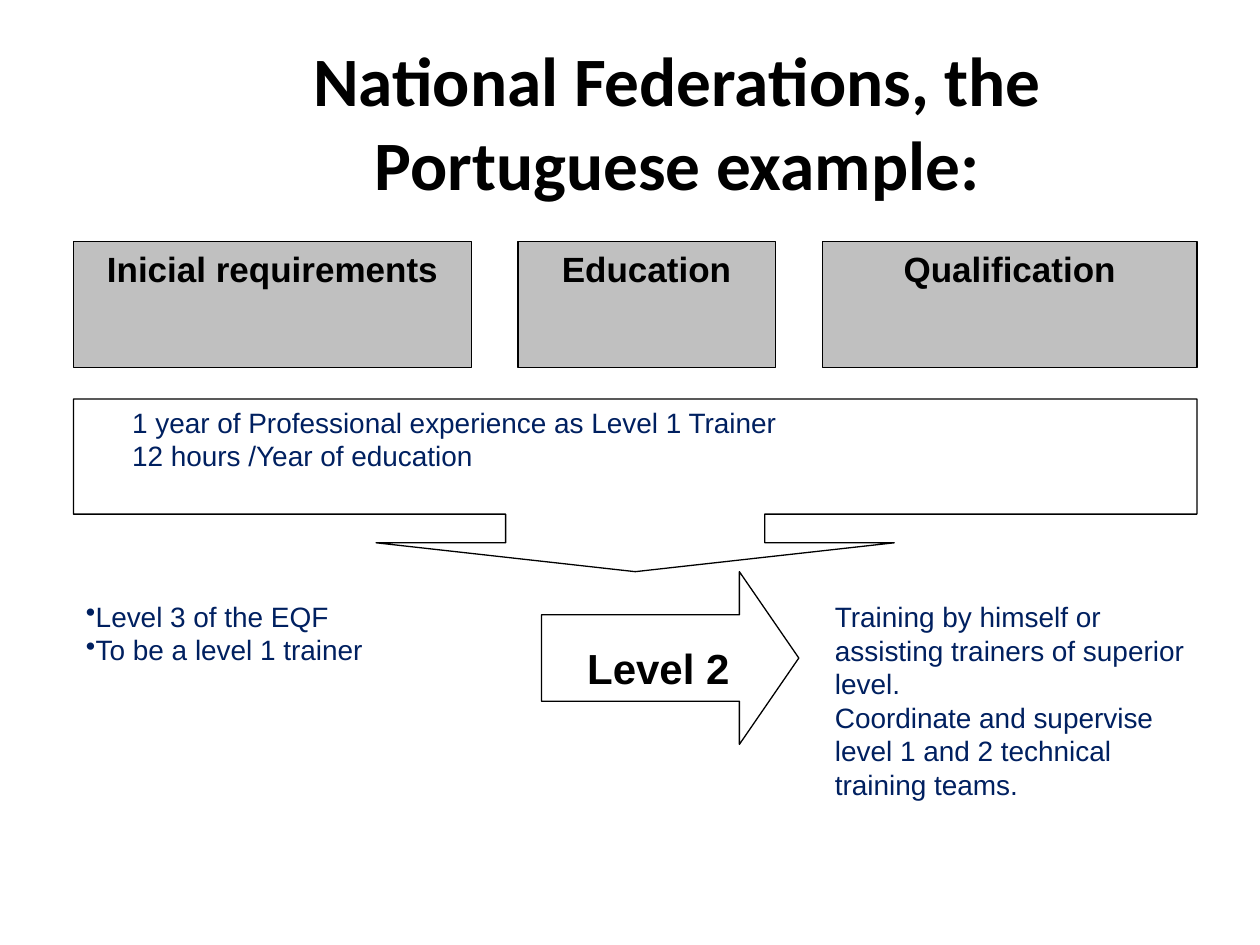
from dataclasses import dataclass

from lxml.etree import SubElement
from pptx import Presentation
from pptx.dml.color import RGBColor
from pptx.enum.shapes import MSO_SHAPE
from pptx.enum.text import MSO_ANCHOR, MSO_AUTO_SIZE, PP_ALIGN
from pptx.oxml.ns import qn
from pptx.util import Pt

BLACK = RGBColor(0x00, 0x00, 0x00)
WHITE = RGBColor(0xFF, 0xFF, 0xFF)
SILVER = RGBColor(0xC0, 0xC0, 0xC0)
NAVY = RGBColor(0x00, 0x20, 0x60)


@dataclass
class Area:
    left: float
    top: float
    width: float
    height: float

    def lengths(self):
        return [Pt(value) for value in (self.left, self.top, self.width, self.height)]


@dataclass
class Column:
    heading: str
    left: float
    width: float


REQUIREMENTS = Column("Inicial requirements", 42, 227.5)
EDUCATION = Column("Education", 296, 147)
QUALIFICATION = Column("Qualification", 470, 214)
COLUMNS = [REQUIREMENTS, EDUCATION, QUALIFICATION]

HEADING_TOP, HEADING_HEIGHT = 138, 72
CALLOUT = Area(42, 228, 642, 98.7)
CALLOUT_TEXT = Area(68.4, 228, 588, 62)
DETAIL_TOP = 339
ARROW = Area(309.5, 326.7, 147, 98.7)
ARROW_TEXT = Area(322.5, 363.6, 107.5, 38)


def write(shape, *lines: str, size: float = 16, font: str = "Arial",
          color: RGBColor = NAVY, bold: bool = False, bullet: str = "",
          align: PP_ALIGN = PP_ALIGN.LEFT, anchor: MSO_ANCHOR = MSO_ANCHOR.TOP):
    frame = shape.text_frame
    frame.word_wrap = True
    frame.auto_size = MSO_AUTO_SIZE.NONE
    frame.vertical_anchor = anchor
    for number, line in enumerate(lines):
        para = frame.add_paragraph() if number else frame.paragraphs[0]
        para.alignment = align
        if bullet:
            SubElement(para._p.get_or_add_pPr(), qn("a:buChar"), char=bullet)
        span = para.add_run()
        span.text = line
        span.font.size = Pt(size)
        span.font.name = font
        span.font.bold = bold
        span.font.color.rgb = color


def add_shape(page, kind: MSO_SHAPE, area: Area, fill: RGBColor | None = None,
              line: RGBColor | None = None, adjustments: tuple[float, ...] = ()):
    shape = page.shapes.add_shape(kind, *area.lengths())
    shape.shadow.inherit = False
    for number, value in enumerate(adjustments):
        shape.adjustments[number] = value
    if fill is None:
        shape.fill.background()
    else:
        shape.fill.solid()
        shape.fill.fore_color.rgb = fill
    if line is None:
        shape.line.fill.background()
    else:
        shape.line.color.rgb = line
        shape.line.width = Pt(0.75)
    return shape


def add_heading(page, column: Column):
    area = Area(column.left, HEADING_TOP, column.width, HEADING_HEIGHT)
    box = add_shape(page, MSO_SHAPE.RECTANGLE, area, SILVER, BLACK)
    write(box, column.heading, size=20, color=BLACK, bold=True, align=PP_ALIGN.CENTER)


def add_details(page, column: Column, height: float, *lines: str, bullet: str = ""):
    area = Area(column.left, DETAIL_TOP, column.width, height)
    box = add_shape(page, MSO_SHAPE.RECTANGLE, area, WHITE)
    write(box, *lines, bullet=bullet)


def main():
    deck = Presentation()
    deck.slide_width, deck.slide_height = Pt(720), Pt(540)
    page = deck.slides.add_slide(deck.slide_layouts[5])

    title = page.shapes.title
    title.left, title.top, title.width, title.height = Area(90, 24, 594, 90).lengths()
    write(title, "National Federations, the Portuguese example:", size=39.6,
          font="Calibri", color=BLACK, bold=True, align=PP_ALIGN.CENTER,
          anchor=MSO_ANCHOR.MIDDLE)

    for column in COLUMNS:
        add_heading(page, column)

    add_shape(page, MSO_SHAPE.DOWN_ARROW_CALLOUT, CALLOUT, WHITE, BLACK,
              (1.5, 1.5, 0.167, 0.667))
    write(page.shapes.add_textbox(*CALLOUT_TEXT.lengths()),
          "1 year of Professional experience as Level 1 Trainer",
          "12 hours /Year of education")

    add_details(page, REQUIREMENTS, 98.7,
                "Level 3 of the EQF", "To be a level 1 trainer", bullet="•")
    add_details(page, QUALIFICATION, 129,
                "Training by himself or assisting trainers of superior level.",
                "Coordinate and supervise level 1 and 2 technical training teams.")

    add_shape(page, MSO_SHAPE.RIGHT_ARROW, ARROW, line=BLACK, adjustments=(0.5, 0.344))
    write(page.shapes.add_textbox(*ARROW_TEXT.lengths()), "Level 2",
          size=24, color=BLACK, bold=True, align=PP_ALIGN.CENTER)

    deck.save("out.pptx")


if __name__ == "__main__":
    main()
